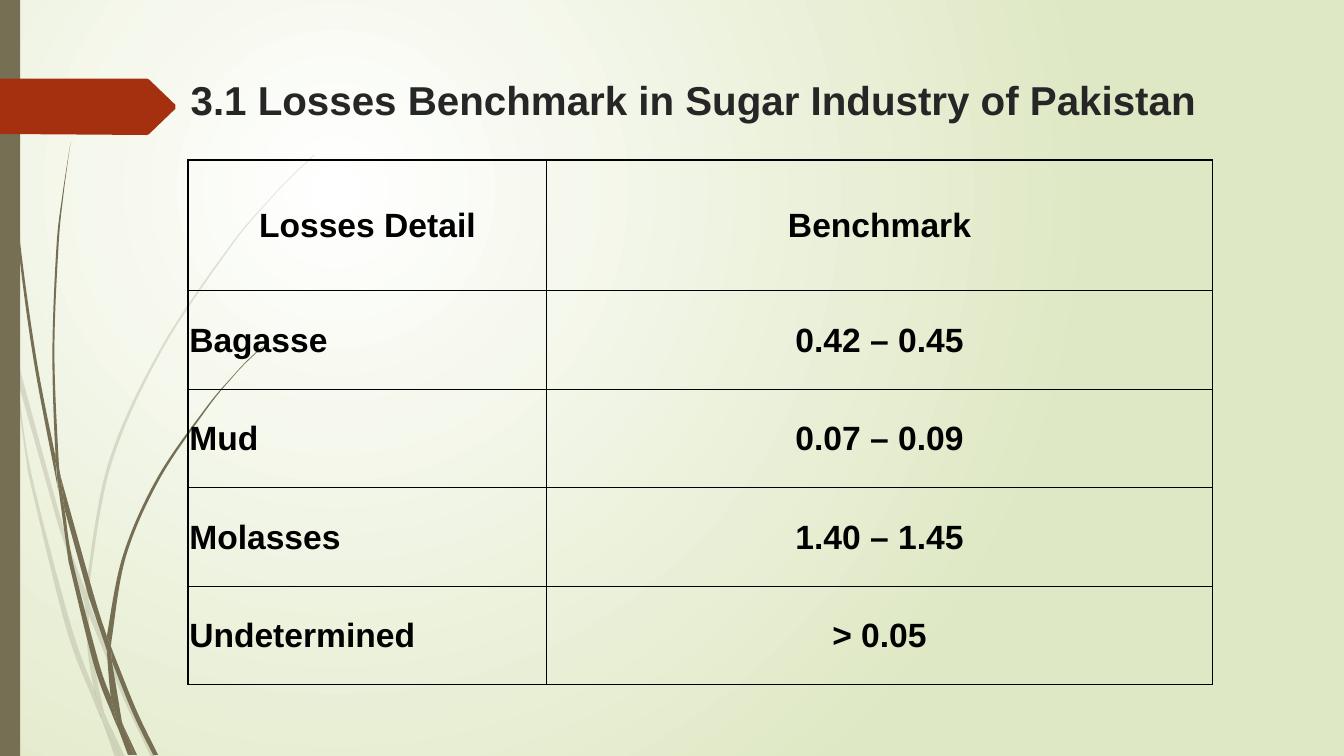
import lxml.etree
import pptx
import pptx.dml.color
import pptx.enum.shapes
import pptx.enum.text
import pptx.oxml.ns
import pptx.util

OLIVE = "766F54"
RUST = "A53010"
FONT = "Arial"

LOSSES = [
    ("Losses Detail", "Benchmark"),
    ("Bagasse", "0.42 – 0.45"),
    ("Mud", "0.07 – 0.09"),
    ("Molasses", "1.40 – 1.45"),
    ("Undetermined", "> 0.05"),
]

PALE_GRASS = [
    ([(0.11, 3.5), (0.09, 3.22), (0, 2.82)], [(0, 2.99), (0.1, 3.44), (0.11, 3.5)]),
    ([(0.58, 5.22), (0.84, 5.99)], [(0.85, 5.86), (0.62, 5.2), (0.14, 3.45)], [(0.17, 3.76), (0.58, 5.22)]),
    ([(0.92, 6.07), (0.88, 5.96)], [(0.88, 6.1), (1.23, 6.94), (1.5, 7.51)],
     [(1.55, 7.51), (1.27, 6.92), (0.92, 6.07)]),
    ([(1.19, 7.51), (1.24, 7.51)], [(1.05, 7.11), (1.19, 7.51)]),
    ([(0.93, 6.83), (0.7, 6.19), (0.31, 4.69), (0.17, 3.76), (0.11, 3.5)],
     [(0.28, 4.7), (0.65, 6.21), (0.92, 6.93), (1.01, 7.14)], [(0.99, 7.07), (0.93, 6.83)]),
    ([(0.84, 5.99), (0.87, 6.46), (0.93, 6.83), (0.96, 6.92), (1.05, 7.11)],
     [(1.03, 7.06), (0.91, 6.46), (0.88, 6.1), (0.88, 6.08)]),
    ([(0.88, 5.84), (1.1, 4.62), (1.6, 3.49), (2.29, 2.45), (2.68, 1.98), (2.9, 1.75), (3.12, 1.54)],
     [(3.12, 1.53), (2.89, 1.75), (2.68, 1.97), (2.28, 2.44), (1.58, 3.48), (1.07, 4.61), (0.85, 5.84)],
     [(0.85, 5.86), (0.88, 5.96)]),
    ([(1.01, 7.14), (1.14, 7.51)], [(1.19, 7.51), (1.01, 7.14)]),
    ([(0.88, 6.08), (0.88, 6.1)], [(0.88, 5.96), (0.85, 5.86)], [(0.84, 5.99), (0.88, 6.08)]),
    ([(0.96, 6.92), (0.93, 6.83)], [(0.99, 7.07), (1.01, 7.14), (1.19, 7.51)], [(1.05, 7.11), (0.96, 6.92)]),
]

DARK_GRASS = [
    ([(0.07, 1.1), (0.17, 2.33), (0.33, 3.55), (0.56, 4.77), (0.57, 4.81)],
     [(0.55, 4.57), (0.55, 4.53), (0.36, 3.55), (0.19, 2.32), (0.08, 1.09), (0.05, 0.48), (0.04, 0)],
     [(0.03, 0), (0.04, 0.48), (0.07, 1.1)]),
    ([(0.88, 5.92), (1.06, 6.45)], [(1.06, 6.33), (1.06, 6.31), (0.93, 5.9), (0.6, 4.72)],
     [(0.64, 5.05), (0.88, 5.92)]),
    ([(1.13, 6.49), (1.1, 6.41)], [(1.11, 6.56), (1.32, 7.08), (1.52, 7.49)],
     [(1.57, 7.49), (1.36, 7.06), (1.13, 6.49)]),
    ([(1.1, 6.91), (0.98, 6.57), (0.72, 5.56), (0.64, 5.05), (0.57, 4.77)],
     [(0.68, 5.57), (0.93, 6.59), (1.11, 7.08), (1.17, 7.22)], [(1.16, 7.17), (1.1, 6.91)]),
    ([(0.6, 4.72), (0.58, 4.53), (0.54, 3.49), (0.58, 2.45), (0.63, 1.93), (0.7, 1.41)],
     [(0.7, 1.41), (0.62, 1.93), (0.56, 2.45), (0.52, 3.49), (0.55, 4.49), (0.6, 4.72)]),
    ([(1.33, 7.49), (1.36, 7.49)], [(1.22, 7.19), (1.33, 7.49)]),
    ([(0.57, 4.77), (0.64, 5.05)], [(0.6, 4.72), (0.55, 4.49)], [(0.55, 4.53), (0.57, 4.77)]),
    ([(1.11, 6.33), (1.25, 5.52), (1.58, 4.76), (2.05, 4.06), (2.31, 3.74), (2.45, 3.59), (2.61, 3.44)],
     [(2.6, 3.44), (2.45, 3.58), (2.31, 3.73), (2.04, 4.05), (1.56, 4.74), (1.22, 5.51), (1.06, 6.31)],
     [(1.1, 6.41), (1.11, 6.33)]),
    ([(1.17, 7.22), (1.27, 7.49)], [(1.31, 7.49), (1.17, 7.22)]),
    ([(1.06, 6.45), (1.1, 6.91), (1.16, 7.06), (1.22, 7.19)],
     [(1.21, 7.16), (1.11, 6.56), (1.09, 6.51), (1.06, 6.45)]),
    ([(1.06, 6.45), (1.11, 6.56)], [(1.1, 6.41), (1.06, 6.31)], [(1.06, 6.33), (1.06, 6.45)]),
    ([(1.16, 7.06), (1.1, 6.91)], [(1.16, 7.17), (1.17, 7.22), (1.3, 7.49)],
     [(1.33, 7.49), (1.22, 7.19), (1.16, 7.06)]),
]

ARROW = ([(0, 0.78), (1.46, 0.78)], [(1.48, 0.79), (1.74, 1.04)], [(1.74, 1.08), (1.48, 1.33)], [(1.46, 1.34), (0, 1.33)])


def color(hex_string):
    return pptx.dml.color.RGBColor.from_string(hex_string)


def add_element(parent, tag, **attributes):
    return lxml.etree.SubElement(parent, pptx.oxml.ns.qn(tag), attributes)


def write_text(text_frame, text, size=24, font_color="000000", alignment="LEFT"):
    paragraph = text_frame.paragraphs[0]
    paragraph.alignment = getattr(pptx.enum.text.PP_ALIGN, alignment)
    run = paragraph.add_run()
    run.text = text
    run.font.name = FONT
    run.font.size = pptx.util.Pt(size)
    run.font.bold = True
    run.font.color.rgb = color(font_color)


def paint(shape, fill_color, opacity=100):
    shape.shadow.inherit = False
    shape.fill.solid()
    shape.fill.fore_color.rgb = color(fill_color)
    shape.line.fill.background()
    if opacity < 100:
        fill = shape.element.spPr.find(pptx.oxml.ns.qn("a:solidFill"))
        add_element(fill[0], "a:alpha", val=str(opacity * 1000))


def paint_background(slide):
    fill = slide.background.fill
    fill.gradient()
    for stop, position, stop_color in zip(fill.gradient_stops, (0, 1), ("FFFFFF", "DFE8C4")):
        stop.position = position
        stop.color.rgb = color(stop_color)
    gradient = next(slide.element.iter(pptx.oxml.ns.qn("a:gradFill")))
    gradient.remove(gradient.find(pptx.oxml.ns.qn("a:lin")))
    circle = add_element(gradient, "a:path", path="circle")
    add_element(circle, "a:fillToRect", l="50000", t="50000", r="100000", b="100000")


def curve_controls(edge):
    padded = [edge[0], *edge, edge[-1]]
    for before, start, end, after in zip(padded, padded[1:], padded[2:], padded[3:]):
        yield (
            [b + (c - a) / 6 for a, b, c in zip(before, start, end)],
            [c - (d - b) / 6 for b, c, d in zip(start, end, after)],
        )


def add_outline(slide, edges, fill_color, opacity=100):
    edges = [[(pptx.util.Cm(x * 2.54), pptx.util.Cm(y * 2.54)) for x, y in edge] for edge in edges]
    corners = [corner for edge in edges for corner in edge]
    builder = slide.shapes.build_freeform(*corners[0])
    builder.add_line_segments(corners[1:], close=True)
    shape = builder.convert_to_shape()
    lines = iter(list(shape.element.iter(pptx.oxml.ns.qn("a:lnTo"))))
    for index, edge in enumerate(edges):
        if index:
            next(lines)
        for controls in curve_controls(edge):
            line = next(lines)
            curve = line.getparent().makeelement(pptx.oxml.ns.qn("a:cubicBezTo"))
            for x, y in controls:
                add_element(curve, "a:pt", x=str(round(x - shape.left)), y=str(round(y - shape.top)))
            line.getparent().replace(line, curve)
            curve.append(line[0])
    paint(shape, fill_color, opacity)


def add_side_bar(slide):
    bar = slide.shapes.add_shape(
        pptx.enum.shapes.MSO_SHAPE.RECTANGLE, 0, 0, pptx.util.Cm(0.51), pptx.util.Cm(19.05)
    )
    paint(bar, OLIVE)


def set_title(slide, text):
    title = slide.shapes.title
    title.left, title.top, title.width, title.height = map(pptx.util.Cm, (4.55, 1.78, 27.4, 1.78))
    text_frame = title.text_frame
    text_frame.word_wrap = True
    text_frame.vertical_anchor = pptx.enum.text.MSO_ANCHOR.TOP
    write_text(text_frame, text, size=28.8, font_color="262626")


def format_cell(cell):
    cell.vertical_anchor = pptx.enum.text.MSO_ANCHOR.MIDDLE
    cell.margin_left = cell.margin_right = cell.margin_top = pptx.util.Cm(0.03)
    cell.margin_bottom = 0
    properties = cell._tc.get_or_add_tcPr()
    for side in ("a:lnL", "a:lnR", "a:lnT", "a:lnB"):
        border = add_element(properties, side, w=str(pptx.util.Pt(1)))
        add_element(add_element(border, "a:solidFill"), "a:srgbClr", val="000000")
    cell.fill.background()


def add_losses_table(slide):
    column_widths = (9.04, 16.77)
    row_heights = (3.3,) + (2.48,) * (len(LOSSES) - 1)
    sizes = map(pptx.util.Cm, (4.74, 4.03, sum(column_widths), sum(row_heights)))
    table = slide.shapes.add_table(len(LOSSES), len(column_widths), *sizes).table
    table.first_row = table.horz_banding = False
    for column, width in zip(table.columns, column_widths):
        column.width = pptx.util.Cm(width)
    for row, height in zip(table.rows, row_heights):
        row.height = pptx.util.Cm(height)
    for row_index, texts in enumerate(LOSSES):
        for column_index, text in enumerate(texts):
            cell = table.cell(row_index, column_index)
            format_cell(cell)
            is_label = row_index > 0 and column_index == 0
            write_text(cell.text_frame, text, alignment="LEFT" if is_label else "CENTER")


def main():
    presentation = pptx.Presentation()
    presentation.slide_width = pptx.util.Cm(33.87)
    presentation.slide_height = pptx.util.Cm(19.05)
    slide = presentation.slides.add_slide(presentation.slide_layouts.get_by_name("Title Only"))
    paint_background(slide)
    for grass, opacity in ((PALE_GRASS, 20), (DARK_GRASS, 100)):
        for blade in grass:
            add_outline(slide, blade, OLIVE, opacity)
    add_side_bar(slide)
    add_outline(slide, ARROW, RUST)
    set_title(slide, "3.1 Losses Benchmark in Sugar Industry of Pakistan")
    add_losses_table(slide)
    presentation.save("out.pptx")


if __name__ == "__main__":
    main()
